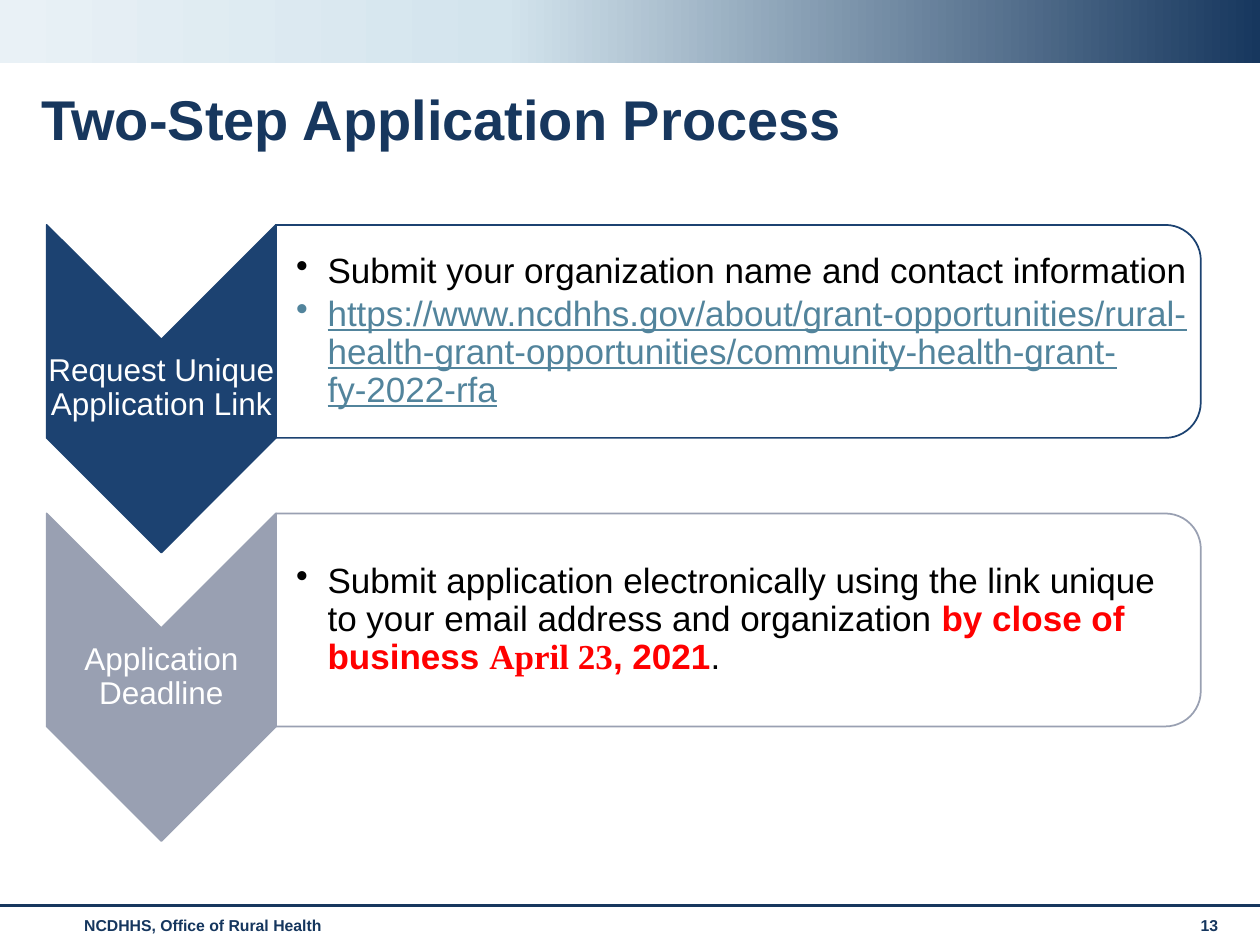
from copy import deepcopy
from typing import NamedTuple

from lxml.etree import SubElement
from pptx import Presentation
from pptx.dml.color import RGBColor
from pptx.enum.shapes import MSO_CONNECTOR, MSO_SHAPE
from pptx.enum.text import MSO_ANCHOR, PP_ALIGN
from pptx.oxml.ns import qn
from pptx.util import Inches, Pt

COLORS = {
    "navy": "17375E", "footer": "15365E", "blue": "1C4271", "gray": "99A0B2",
    "link": "52849C", "red": "FF0000", "black": "000000", "white": "FFFFFF",
    "sky": "D3E4ED", "mist": "E9F1F6",
}

# The page is a grid of 100 columns by 75 rows
WIDTH, HEIGHT = Inches(10), Inches(7.5)
COLUMN, ROW = WIDTH / 100, HEIGHT / 75

# Step layout, in columns and rows
STEP_TOP, STEP_PITCH = 17.85, 22.9
ARROW_LEFT, ARROW_WIDTH, ARROW_HEIGHT = 3.7, 18.2, 26
PANEL_LEFT, PANEL_WIDTH, PANEL_HEIGHT = 21.9, 73.4, 16.9


class Box(NamedTuple):
    left: float
    top: float
    width: float
    height: float


class Span(NamedTuple):
    text: str
    color: str = "black"
    bold: bool = False
    underline: bool = False
    font: str = "Arial"


class Step(NamedTuple):
    label: str
    color: str
    bullets: list[list[Span]]


STEPS = [
    Step("Request Unique Application Link", "blue", [
        [Span("Submit your organization name and contact information")],
        [Span("https://www.ncdhhs.gov/about/grant-opportunities/"
              "rural-health-grant-opportunities/community-health-grant-fy-2022-rfa",
              "link", underline=True)],
    ]),
    Step("Application Deadline", "gray", [[
        Span("Submit application electronically using the link unique "
             "to your email address and organization "),
        Span("by close of business ", "red", True),
        Span("April 23", "red", True, font="Times New Roman"),
        Span(", 2021", "red", True),
        Span("."),
    ]]),
]


def rgb(name: str) -> RGBColor:
    return RGBColor.from_string(COLORS[name])


def place(box: Box) -> list[int]:
    return [round(box.left * COLUMN), round(box.top * ROW),
            round(box.width * COLUMN), round(box.height * ROW)]


def add_text(page, box: Box, paras: list[list[Span]], *, size: float,
             align=PP_ALIGN.LEFT, anchor=MSO_ANCHOR.TOP, insets=(1, 0.5, 1, 0.5),
             spacing: float = 1, after: float = 0, bullet: bool = False) -> None:
    frame = page.shapes.add_textbox(*place(box)).text_frame
    frame.word_wrap = True
    frame.vertical_anchor = anchor
    (frame.margin_left, frame.margin_top,
     frame.margin_right, frame.margin_bottom) = [round(inset * COLUMN) for inset in insets]
    for index, spans in enumerate(paras):
        para = frame.paragraphs[0] if index == 0 else frame.add_paragraph()
        para.alignment = align
        para.line_spacing = spacing
        para.space_after = Pt(after)
        if bullet:
            props = para._p.get_or_add_pPr()
            props.set("marL", str(Inches(0.25)))
            props.set("indent", str(-Inches(0.25)))
            SubElement(props, qn("a:buChar"), char="•")
        for span in spans:
            run = para.add_run()
            run.text = span.text
            run.font.name, run.font.size = span.font, Pt(size)
            run.font.bold, run.font.underline = span.bold, span.underline
            run.font.color.rgb = rgb(span.color)


def add_turned(page, kind: MSO_SHAPE, box: Box, fill: str, line: str):
    """Draw a shape turned by 90 degrees so that it covers the box."""
    shift = (box.width - box.height) / 2
    upright = Box(box.left + shift, box.top - shift, box.height, box.width)
    shape = page.shapes.add_shape(kind, *place(upright))
    shape.rotation = 90
    shape.shadow.inherit = False
    shape.fill.solid()
    shape.fill.fore_color.rgb = rgb(fill)
    shape.line.color.rgb = rgb(line)
    shape.line.width = Pt(1)
    return shape


def add_banner(page) -> None:
    banner = page.shapes.add_shape(MSO_SHAPE.RECTANGLE, *place(Box(0, 0, 100, 5)))
    banner.shadow.inherit = False
    banner.line.fill.background()
    banner.fill.gradient()
    banner.fill.gradient_angle = 180
    stop_list = banner._element.find(".//" + qn("a:gsLst"))
    stop_list.append(deepcopy(stop_list[-1]))
    stops = [(0, "navy"), (0.6, "sky"), (1, "mist")]
    for stop, (position, color) in zip(banner.fill.gradient_stops, stops):
        stop.position = position
        stop.color.rgb = rgb(color)


def add_rule(page, row: float) -> None:
    left, top, width, _ = place(Box(0, row, 100, 0))
    rule = page.shapes.add_connector(MSO_CONNECTOR.STRAIGHT, left, top, width, top)
    rule.line.color.rgb = rgb("navy")
    rule.line.width = Pt(1.75)
    SubElement(rule._element.spPr, qn("a:effectLst"))


def add_step(page, step: Step, top: float) -> None:
    # Arrow and its label
    add_turned(page, MSO_SHAPE.CHEVRON,
               Box(ARROW_LEFT, top, ARROW_WIDTH, ARROW_HEIGHT), step.color, step.color)
    notch = ARROW_WIDTH / 2
    add_text(page, Box(ARROW_LEFT, top + notch, ARROW_WIDTH, ARROW_HEIGHT - 2 * notch),
             [[Span(step.label, "white")]], size=18, align=PP_ALIGN.CENTER,
             anchor=MSO_ANCHOR.MIDDLE, insets=(0.1,) * 4, spacing=0.9)
    # Panel and its bullets
    panel = add_turned(page, MSO_SHAPE.ROUND_2_SAME_RECTANGLE,
                       Box(PANEL_LEFT, top, PANEL_WIDTH, PANEL_HEIGHT), "white", step.color)
    fill_color = panel._element.spPr.find(qn("a:solidFill"))[0]
    SubElement(fill_color, qn("a:alpha"), val="90000")
    add_text(page, Box(PANEL_LEFT, top + 0.85, PANEL_WIDTH - 0.8, PANEL_HEIGHT - 1.7),
             step.bullets, size=20, anchor=MSO_ANCHOR.MIDDLE,
             insets=(1.6, 0.1, 0.1, 0.1), spacing=0.9, after=3, bullet=True)


def main() -> None:
    deck = Presentation()
    deck.slide_width, deck.slide_height = WIDTH, HEIGHT
    page = deck.slides.add_slide(deck.slide_layouts[6])

    # Footer, banner and rule
    add_text(page, Box(5.7, 72.2, 87.4, 2.9),
             [[Span("NCDHHS, Office of Rural Health", "footer", True)]], size=9)
    add_text(page, Box(94.3, 72.2, 4.4, 3), [[Span("13", "footer", True)]], size=9)
    add_banner(page)
    add_rule(page, 71.9)

    # Title
    add_text(page, Box(2.3, 6.8, 96.6, 5.7),
             [[Span("Two-Step Application Process", "navy", True)]], size=32, spacing=0.9)

    # Steps
    for index, step in enumerate(STEPS):
        add_step(page, step, STEP_TOP + index * STEP_PITCH)

    deck.save("out.pptx")


if __name__ == "__main__":
    main()
